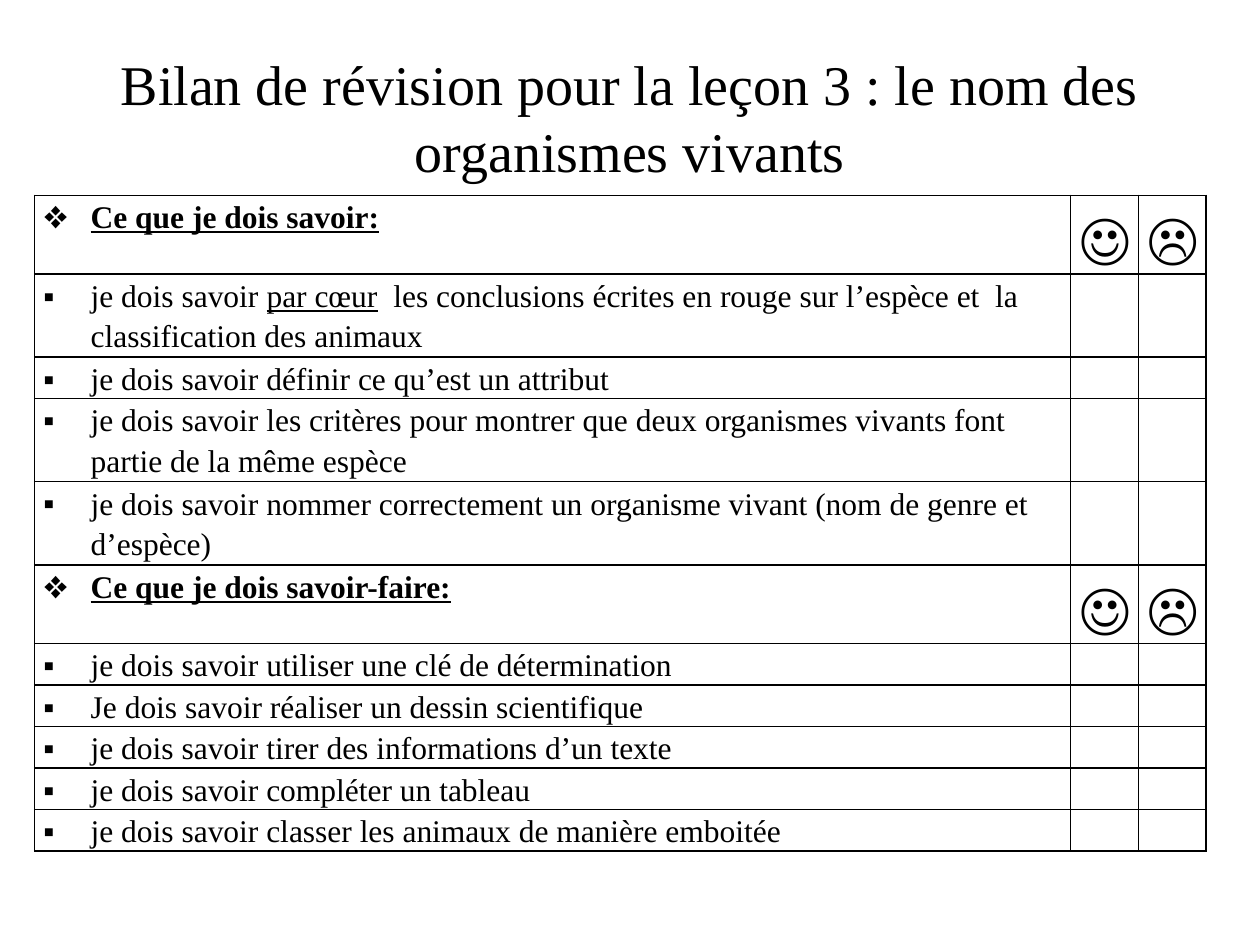
import pptx
import pptx.util
import pptx.dml.color
import pptx.enum.text
import pptx.oxml
import pptx.oxml.ns

Pt = pptx.util.Pt
align = pptx.enum.text.PP_ALIGN
anchor = pptx.enum.text.MSO_ANCHOR
fit = pptx.enum.text.MSO_AUTO_SIZE

theme = {
    "ink": "000000", "text": "Times New Roman", "face": "Calibri",
    "big": 32, "small": 18, "line": 1, "space": 1.15,
}
title = "Bilan de révision pour la leçon 3 : le nom des organismes vivants"
faces = ["☺", "☹"]
parts = [
    ("Ce que je dois savoir:", [
        (2, [("je dois savoir ", False), ("par cœur", True),
             ("  les conclusions écrites en rouge sur l’espèce et  la classification des animaux", False)]),
        (1, [("je dois savoir définir ce qu’est un attribut", False)]),
        (2, [("je dois savoir les critères pour montrer que deux organismes vivants font partie de la même espèce", False)]),
        (2, [("je dois savoir nommer correctement un organisme vivant (nom de genre et d’espèce)", False)]),
    ]),
    ("Ce que je dois savoir-faire:", [
        (1, [("je dois savoir utiliser une clé de détermination", False)]),
        (1, [("Je dois savoir réaliser un dessin scientifique", False)]),
        (1, [("je dois savoir tirer des informations d’un texte", False)]),
        (1, [("je dois savoir compléter un tableau", False)]),
        (1, [("je dois savoir classer les animaux de manière emboitée", False)]),
    ]),
]
wide = [592, 38.7, 38.7]
head, step = 44.8, 23.75
left, top, hang = 19.8, 111.6, 27


def add_run(para, text, font, size, bold=False, under=False):
    run = para.add_run()
    run.text = text
    run.font.name = font
    run.font.size = Pt(size)
    run.font.bold = bold
    run.font.underline = under
    run.font.color.rgb = pptx.dml.color.RGBColor.from_string(theme["ink"])


def add_mark(para, mark):
    props = para._p.get_or_add_pPr()
    props.set("marL", str(Pt(hang)))
    props.set("indent", str(-Pt(hang)))
    space = pptx.oxml.ns.nsdecls("a")
    props.append(pptx.oxml.parse_xml(f'<a:buFont {space} typeface="{theme["text"]}"/>'))
    props.append(pptx.oxml.parse_xml(f'<a:buChar {space} char="{mark}"/>'))


def style(cell):
    cell.margin_left = cell.margin_right = Pt(5)
    cell.margin_top = cell.margin_bottom = 0
    props = cell._tc.get_or_add_tcPr()
    for side in "LRTB":
        props.append(pptx.oxml.parse_xml(
            f'<a:ln{side} {pptx.oxml.ns.nsdecls("a")} w="{Pt(theme["line"])}">'
            f'<a:solidFill><a:srgbClr val="{theme["ink"]}"/></a:solidFill></a:ln{side}>'))
    cell.fill.background()
    para = cell.text_frame.paragraphs[0]
    para.font.size = Pt(theme["small"])
    return para


def add_title(slide):
    shape = slide.shapes.title
    shape.left, shape.top, shape.width, shape.height = Pt(36), Pt(21.6), Pt(648), Pt(90)
    frame = shape.text_frame
    frame.auto_size = fit.NONE
    frame.word_wrap = True
    frame.vertical_anchor = anchor.MIDDLE
    para = frame.paragraphs[0]
    para.alignment = align.CENTER
    add_run(para, title, theme["text"], theme["big"])


def add_grid(slide):
    rows = []
    for name, items in parts:
        rows.append((head, "❖", [(name, True)], faces))
        rows += [(lines * step, "▪", runs, []) for lines, runs in items]
    total = sum(row[0] for row in rows)
    table = slide.shapes.add_table(
        len(rows), len(wide), Pt(left), Pt(top), Pt(sum(wide)), Pt(total)).table
    table.first_row = table.horz_banding = False
    for col, width in zip(table.columns, wide):
        col.width = Pt(width)
    for row, (high, mark, runs, signs) in zip(table.rows, rows):
        row.height = Pt(high)
        paras = [style(cell) for cell in row.cells]
        paras[0].line_spacing = theme["space"]
        add_mark(paras[0], mark)
        for text, under in runs:
            add_run(paras[0], text, theme["text"], theme["small"], bool(signs), under)
        for para, sign in zip(paras[1:], signs):
            para.line_spacing = theme["space"]
            add_run(para, sign, theme["face"], theme["big"])


def main():
    deck = pptx.Presentation()
    deck.slide_width, deck.slide_height = Pt(720), Pt(540)
    slide = deck.slides.add_slide(deck.slide_layouts[5])
    add_title(slide)
    add_grid(slide)
    deck.save("out.pptx")


if __name__ == "__main__":
    main()
